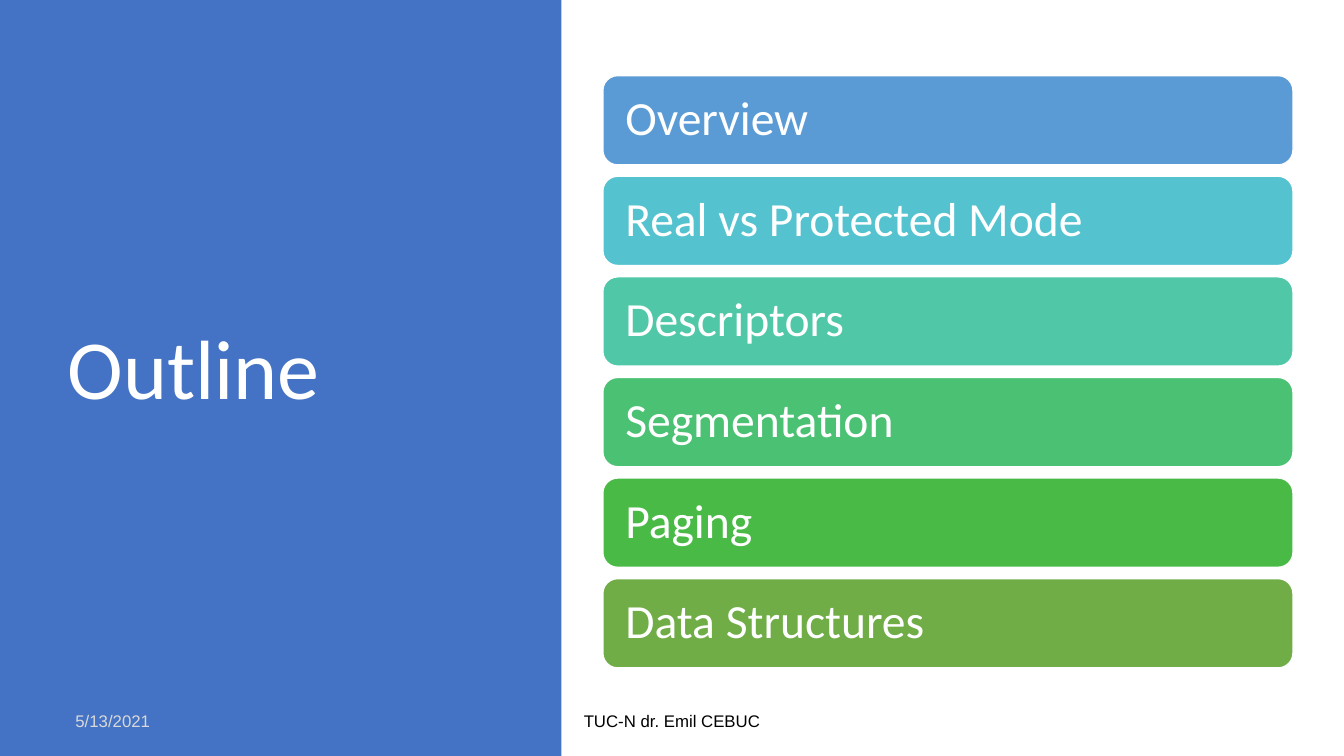
from pptx import Presentation
from pptx.dml.color import RGBColor
from pptx.enum import shapes, text
from pptx.util import Pt

COLORS = {
    "panel": "4472C4",
    "white": "FFFFFF",
    "date": "D9D9D9",
    "footer": "000000",
}
TOPICS = {
    "Overview": "5B9BD5",
    "Real vs Protected Mode": "55C3CF",
    "Descriptors": "50C8A7",
    "Segmentation": "4BC174",
    "Paging": "4ABA46",
    "Data Structures": "70AD47",
}
BAR_TOP, BAR_HEIGHT, BAR_PITCH = 54, 63.8, 71.86


def write(target, wording, font, size, color, align, frame_format, paragraph_format):
    frame = target.text_frame
    frame.text = wording
    frame_format = {
        "word_wrap": True,
        "auto_size": text.MSO_AUTO_SIZE.NONE,
        "vertical_anchor": text.MSO_ANCHOR.MIDDLE,
        **frame_format,
    }
    for key, value in frame_format.items():
        setattr(frame, key, value)
    paragraph = frame.paragraphs[0]
    for key, value in {"alignment": align, **paragraph_format}.items():
        setattr(paragraph, key, value)
    run_font = paragraph.runs[0].font
    for key, value in {"name": font, "size": Pt(size)}.items():
        setattr(run_font, key, value)
    run_font.color.rgb = RGBColor.from_string(color)


def block(preset, left, top, width, height, color):
    area = slide.shapes.add_shape(preset, Pt(left), Pt(top), Pt(width), Pt(height))
    area.shadow.inherit = False
    area.fill.solid()
    area.fill.fore_color.rgb = RGBColor.from_string(color)
    area.line.fill.background()
    return area


deck = Presentation()
deck.slide_width, deck.slide_height = Pt(960), Pt(540)
slide = deck.slides.add_slide(deck.slide_layouts[5])
LEFT, CENTER = text.PP_ALIGN.LEFT, text.PP_ALIGN.CENTER

panel = block(shapes.MSO_SHAPE.RECTANGLE, 0, 0, 401, 540, COLORS["panel"])
heading = slide.shapes.title
heading.element.addprevious(panel.element)
for key, value in {"left": 41, "top": 49, "width": 299.5, "height": 433.5}.items():
    setattr(heading, key, Pt(value))
write(heading, "Outline", "Calibri", 60, COLORS["white"], LEFT, {}, {"line_spacing": 0.9})

for wording, left, width, color, align in [
    ("5/13/2021", 46.8, 216, COLORS["date"], LEFT),
    ("TUC-N dr. Emil CEBUC", 318, 324, COLORS["footer"], CENTER),
]:
    footer = slide.shapes.add_textbox(Pt(left), Pt(500.4), Pt(width), Pt(28.8))
    write(footer, wording, "Arial", 12, color, align, {}, {"space_after": Pt(6)})

for row, (topic, color) in enumerate(TOPICS.items()):
    bar = block(shapes.MSO_SHAPE.ROUNDED_RECTANGLE, 430.6, BAR_TOP + row * BAR_PITCH, 493, BAR_HEIGHT, color)
    bar.line.color.rgb = RGBColor.from_string(COLORS["white"])
    bar.line.width = Pt(1)
    margins = {f"margin_{side}": Pt(13) for side in ("left", "top", "right", "bottom")}
    write(bar, topic, "Calibri", 34, COLORS["white"], LEFT, margins, {"line_spacing": 0.9})

deck.save("out.pptx")
